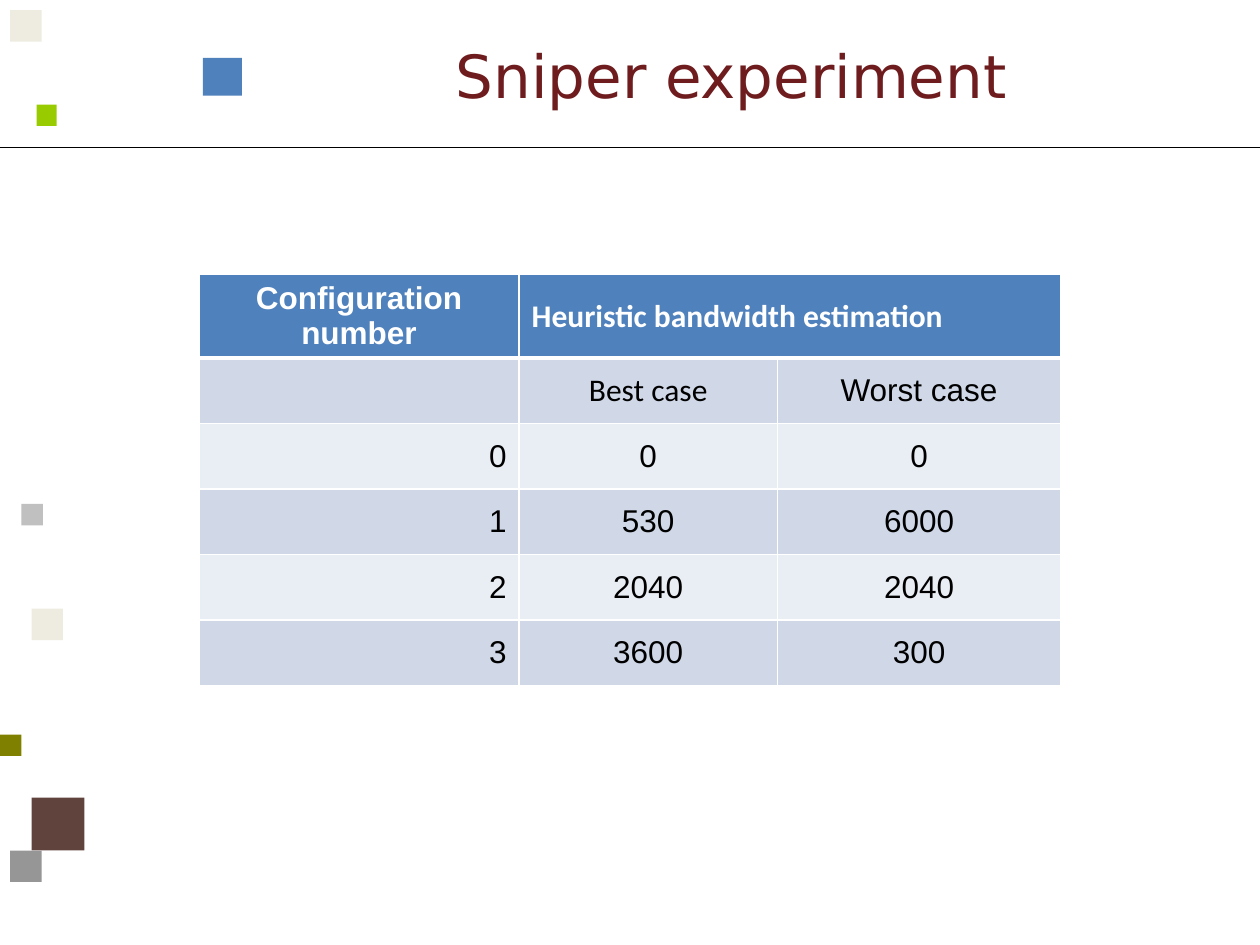
from lxml.etree import SubElement
from pptx import Presentation
from pptx.dml.color import RGBColor
from pptx.enum.shapes import MSO_CONNECTOR as CONN, MSO_SHAPE as SHAPE
from pptx.enum.text import MSO_ANCHOR as ANCHOR, PP_ALIGN as ALIGN
from pptx.oxml import parse_xml
from pptx.oxml.ns import nsdecls, qn
from pptx.util import Inches, Pt

SQUARES = [
    (0.08, 0.08, 0.25, 0.25, "EEECE1"),
    (0.29, 0.83, 0.17, 0.17, "99CC00"),
    (0.17, 4, 0.17, 0.17, "C0C0C0"),
    (0.25, 4.83, 0.25, 0.25, "EEECE1"),
    (0, 5.83, 0.17, 0.17, "808000"),
    (0.25, 6.33, 0.42, 0.42, "61433E"),
    (0.08, 6.75, 0.25, 0.25, "969696"),
]
TITLE_BLOCKS = [
    (0.45, 0.01, 1.05, 1.15, "FFFFFF"),
    (1.61, 0.46, 0.31, 0.3, "4F81BD"),
]
ROWS = [
    ("Configuration number", "Heuristic bandwidth estimation", ""),
    ("", "Best case", "Worst case"),
    ("0", "0", "0"),
    ("1", "530", "6000"),
    ("2", "2040", "2040"),
    ("3", "3600", "300"),
]
COL_WIDTHS = (2.54, 2.05, 2.25)
ROW_HEIGHT = 0.52
CALIBRI_CELLS = {(0, 1), (1, 1)}


def rgb(color):
    """Turn a hex string into a colour."""
    return RGBColor.from_string(color)


def add_run(p, text, font, size, color, bold=False):
    """Add one formatted run to a paragraph."""
    r = p.add_run()
    r.text = text
    r.font.name, r.font.size, r.font.bold = font, Pt(size), bold
    r.font.color.rgb = rgb(color)


def add_block(s, x, y, w, h, color):
    """Add a plain filled rectangle."""
    sp = s.shapes.add_shape(SHAPE.RECTANGLE, *map(Inches, (x, y, w, h)))
    sp.shadow.inherit = False
    sp.fill.solid()
    sp.fill.fore_color.rgb = rgb(color)
    sp.line.fill.background()


def add_rule(s, y):
    """Add the thin line across the slide below the title."""
    line = s.shapes.add_connector(CONN.STRAIGHT, 0, Inches(y), Inches(10), Inches(y))
    line.line.color.rgb = rgb("000000")
    line.line.width = Pt(0.75)
    SubElement(line._element.spPr, qn("a:effectLst"))


def set_title(s, text):
    """Place and format the title placeholder."""
    sp = s.shapes.title
    sp.left, sp.top, sp.width, sp.height = map(Inches, (2.11, 0.16, 7.39, 0.87))
    tf = sp.text_frame
    tf.vertical_anchor = ANCHOR.MIDDLE
    p = tf.paragraphs[0]
    p.alignment = ALIGN.CENTER
    add_run(p, text, "DejaVu Sans", 34, "6E1C1E")


def set_borders(cell, top, bottom):
    """Give a cell white borders, with the top and bottom widths in points."""
    widths = {"lnL": 1, "lnR": 1, "lnT": top, "lnB": bottom}
    tcPr = cell._tc.get_or_add_tcPr()
    for i, (tag, width) in enumerate(widths.items()):
        tcPr.insert(i, parse_xml(
            f'<a:{tag} {nsdecls("a")} w="{Pt(width)}"><a:solidFill>'
            f'<a:srgbClr val="FFFFFF"/></a:solidFill></a:{tag}>'))


def cell_alignment(row, col):
    """Return the alignment for a table position."""
    if (row, col) == (0, 1):
        return ALIGN.LEFT
    return ALIGN.RIGHT if row > 1 and col == 0 else ALIGN.CENTER


def fill_cell(cell, row, col, text):
    """Format one table cell and write its text."""
    header = row == 0
    cell.fill.solid()
    band = "D0D8E8" if row % 2 else "E9EDF4"
    cell.fill.fore_color.rgb = rgb("4F81BD" if header else band)
    cell.vertical_anchor = ANCHOR.MIDDLE
    set_borders(cell, 3 if row == 1 else 1, 3 if header else 1)
    p = cell.text_frame.paragraphs[0]
    p.alignment = cell_alignment(row, col)
    if text:
        font = "Calibri" if (row, col) in CALIBRI_CELLS else "Arial"
        add_run(p, text, font, 18, "FFFFFF" if header else "000000", header)


def add_estimates(s):
    """Add the bandwidth estimation table."""
    size = (sum(COL_WIDTHS), ROW_HEIGHT * len(ROWS))
    table = s.shapes.add_table(len(ROWS), len(COL_WIDTHS),
                               *map(Inches, (1.58, 2.18, *size))).table
    for column, width in zip(table.columns, COL_WIDTHS):
        column.width = Inches(width)
    for i, texts in enumerate(ROWS):
        table.rows[i].height = Inches(ROW_HEIGHT)
        for j, text in enumerate(texts):
            fill_cell(table.cell(i, j), i, j, text)
    table.cell(0, 1).merge(table.cell(0, 2))


def main():
    """Build the slide and save it."""
    prs = Presentation()
    prs.slide_width, prs.slide_height = Inches(10), Inches(7.5)
    s = prs.slides.add_slide(prs.slide_layouts[5])
    for square in SQUARES:
        add_block(s, *square)
    add_rule(s, 1.17)
    for block in TITLE_BLOCKS:
        add_block(s, *block)
    set_title(s, "Sniper experiment")
    add_estimates(s)
    prs.save("out.pptx")


if __name__ == "__main__":
    main()
